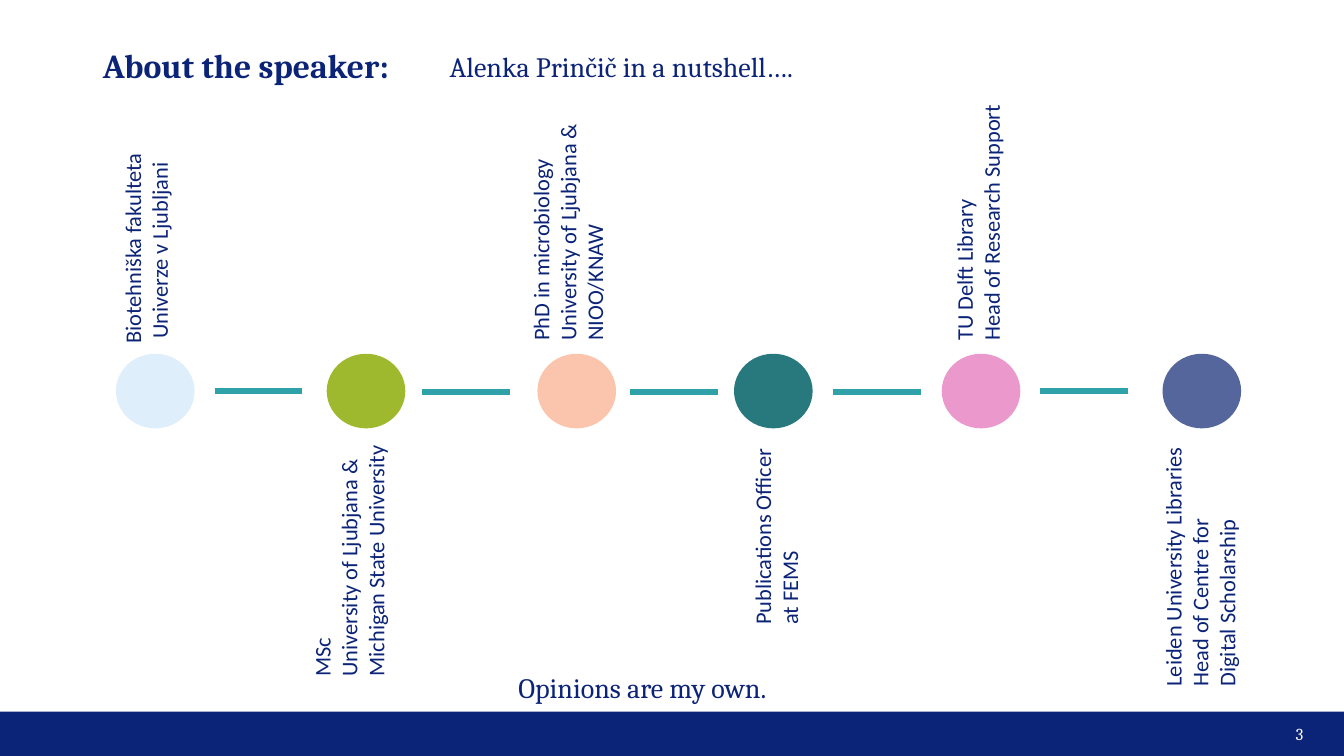
from pptx import Presentation
from pptx.dml.color import RGBColor
from pptx.enum.shapes import MSO_CONNECTOR, MSO_SHAPE
from pptx.oxml.ns import qn
from pptx.util import Inches, Pt
from lxml.etree import SubElement

NAVY = RGBColor(0x0C, 0x24, 0x77)
TEAL = RGBColor(0x2F, 0xA1, 0xA8)
WHITE = RGBColor(0xFF, 0xFF, 0xFF)
PALE_BLUE = RGBColor(0xDE, 0xEE, 0xFA)
GREEN = RGBColor(0x9E, 0xB9, 0x2D)
PEACH = RGBColor(0xFA, 0xC5, 0xAC)
DARK_TEAL = RGBColor(0x27, 0x79, 0x7E)
PINK = RGBColor(0xEB, 0x99, 0xCC)
SLATE = RGBColor(0x54, 0x66, 0x9B)

CIRCLE_WIDTH, CIRCLE_HEIGHT = 0.78, 0.74
LINK_LENGTH = 0.87

# Each stop: circle left, colour, label box (left, top, width, height), label paragraphs
STOPS = [
    (1.15, PALE_BLUE, (1.22, 1.5, 0.52, 1.92),
     ["Biotehniška fakulteta", "Univerze v Ljubljani"]),
    (3.24, GREEN, (3.1, 4.4, 0.78, 2.32),
     ["MSc", "University of Ljubjana & Michigan State University"]),
    (5.33, PEACH, (5.27, 1.21, 0.78, 2.18),
     ["PhD in microbiology", "University of Ljubjana & NIOO/KNAW"]),
    (7.28, DARK_TEAL, (7.47, 4.43, 0.52, 1.78),
     ["Publications Officer", "at FEMS"]),
    (9.34, PINK, (9.47, 1.02, 0.52, 2.37),
     ["TU Delft Library", "Head of Research Support"]),
    (11.53, SLATE, (11.54, 4.42, 0.78, 2.4),
     ["Leiden University Libraries", "Head of Centre for\nDigital Scholarship"]),
]
# Each link: left end and height on the slide
LINKS = [(2.13, 3.88), (4.19, 3.89), (6.25, 3.89), (8.26, 3.89), (10.32, 3.88)]


def add_text_frame(slide, box, top_inset=0.0):
    frame = slide.shapes.add_textbox(*map(Inches, box)).text_frame
    frame.word_wrap = True
    frame.margin_left = frame.margin_right = frame.margin_bottom = 0
    frame.margin_top = Inches(top_inset)
    return frame


def add_run(paragraph, text, size, font_name, color=NAVY, bold=False):
    run = paragraph.add_run()
    run.text = text
    run.font.size = Pt(size)
    run.font.name = font_name
    run.font.color.rgb = color
    run.font.bold = bold


def add_line_of_text(slide, box, text, size, color=NAVY, bold=False):
    frame = add_text_frame(slide, box, 0.02)
    add_run(frame.paragraphs[0], text, size, "Cambria", color, bold)


def add_label(slide, box, texts):
    """Text that reads upwards, starting at the bottom of its box."""
    frame = add_text_frame(slide, box)
    frame._txBody.find(qn("a:bodyPr")).set("vert", "vert270")
    for index, text in enumerate(texts):
        paragraph = frame.paragraphs[0] if index == 0 else frame.add_paragraph()
        indent = 0.06 if text.startswith("Univerze") else 0.01
        paragraph._p.get_or_add_pPr().set("marL", str(Inches(indent)))
        if index == 0:
            paragraph.line_spacing = Pt(16.1)
        for number, line in enumerate(text.split("\n")):
            if number:
                paragraph.add_line_break()
            add_run(paragraph, line, 16, "Calibri")


def add_filled_shape(slide, kind, box, color):
    shape = slide.shapes.add_shape(kind, *map(Inches, box))
    shape.shadow.inherit = False
    shape.fill.solid()
    shape.fill.fore_color.rgb = color
    shape.line.fill.background()


def add_link(slide, left, y):
    connector = slide.shapes.add_connector(
        MSO_CONNECTOR.STRAIGHT, Inches(left), Inches(y), Inches(left + LINK_LENGTH), Inches(y))
    connector.line.color.rgb = TEAL
    connector.line.width = Pt(4.5)
    SubElement(connector._element.spPr, qn("a:effectLst"))


def add_heading(slide, left, top):
    add_line_of_text(slide, (left, top, 3.26, 0.43), "About the speaker:", 24, bold=True)
    add_line_of_text(slide, (left + 3.44, top + 0.04, 3.7, 0.36),
                     "Alenka Prinčič in a nutshell….", 20)


def add_timeline(slide, top):
    for left, color, label_box, texts in STOPS:
        add_filled_shape(slide, MSO_SHAPE.OVAL, (left, top, CIRCLE_WIDTH, CIRCLE_HEIGHT), color)
        add_label(slide, label_box, texts)
    for left, y in LINKS:
        add_link(slide, left, y)


def add_footer(slide, top, width, height):
    add_line_of_text(slide, (5.14, top - 0.43, 2.72, 0.36), "Opinions are my own.", 20)
    add_filled_shape(slide, MSO_SHAPE.RECTANGLE, (0, top, width, height), NAVY)
    add_line_of_text(slide, (width - 0.48, top + 0.1, 0.15, 0.22), "3", 12, WHITE)


def main():
    presentation = Presentation()
    presentation.slide_width = Inches(13.33)
    presentation.slide_height = Inches(7.5)
    slide = presentation.slides.add_slide(presentation.slide_layouts[6])
    add_heading(slide, 1.02, 0.43)
    add_timeline(slide, 3.51)
    add_footer(slide, 7.06, 13.33, 0.44)
    presentation.save("out.pptx")


if __name__ == "__main__":
    main()
